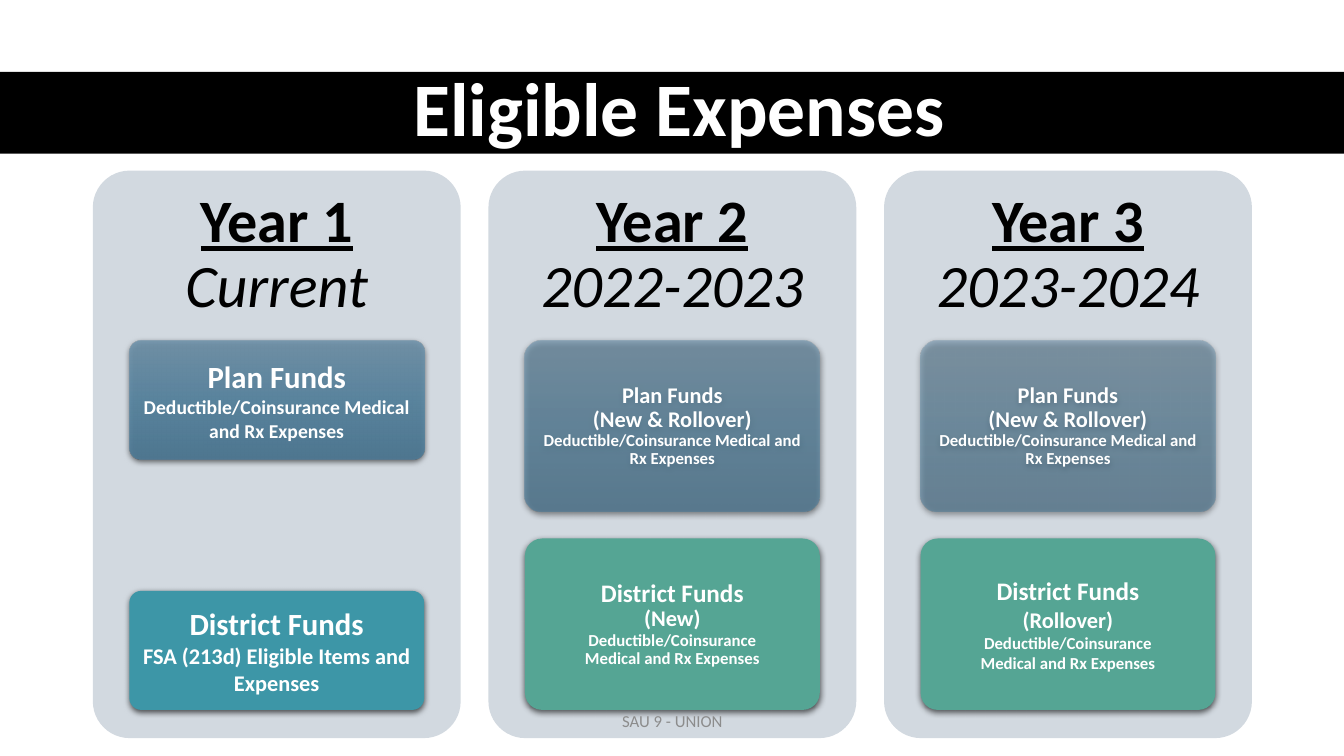
from dataclasses import dataclass
from typing import Any, NamedTuple, Optional

from lxml import etree
from pptx import Presentation
from pptx.dml.color import RGBColor
from pptx.enum.shapes import MSO_SHAPE
from pptx.enum.text import MSO_ANCHOR, MSO_AUTO_SIZE, PP_ALIGN
from pptx.oxml.ns import qn
from pptx.util import Cm, Pt

RECTANGLE = MSO_SHAPE.RECTANGLE
ROUNDED = MSO_SHAPE.ROUNDED_RECTANGLE
MIDDLE = MSO_ANCHOR.MIDDLE
NO_FIT = MSO_AUTO_SIZE.NONE
CENTER = PP_ALIGN.CENTER


@dataclass(frozen=True)
class Theme:
    font: str = "Calibri"
    black: str = "000000"
    white: str = "FFFFFF"
    panel: str = "D2D9E0"
    footer: str = "8C8C8C"
    teal: str = "3D96A7"
    green: str = "55A594"
    gradient: tuple[str, ...] = ("7294AB", "5A88A4", "4D7995")
    title_size: float = 54
    year_size: float = 43
    heading_size: float = 22
    subheading_size: float = 18
    label_size: float = 16
    detail_size: float = 14
    small_size: float = 12


class Box(NamedTuple):
    left: float
    top: float
    width: float
    height: float


class Line(NamedTuple):
    text: str
    size: float
    color: str
    bold: bool = False
    italic: bool = False
    underline: bool = False


@dataclass(frozen=True)
class Card:
    top: float
    height: float
    lines: tuple[Line, ...]
    spacing: float
    color: Optional[str] = None
    opacity: int = 100


@dataclass(frozen=True)
class Column:
    year: str
    period: str
    cards: tuple[Card, ...]


THEME = Theme()
SLIDE_WIDTH, SLIDE_HEIGHT = 33.87, 19.05
BAND = Box(0, 1.81, SLIDE_WIDTH, 2.06)
TITLE = Box(1.55, 1.78, 31.14, 2.06)
FOOTER = Box(11.23, 17.65, 11.43, 1.02)
PANEL = Box(2.34, 4.3, 9.27, 14.3)
COLUMN_PITCH = 9.97
YEAR_HEIGHT = 4.29
CARD_INSET = 0.92
CARD_WIDTH = 7.43
CARD_TOP = 8.58
CARD_BOTTOM = 17.89
CARD_HEIGHT = 4.32
SHORT_HEIGHT = 3
CORNER = 0.1
DEDUCTIBLE = "Deductible/Coinsurance Medical and Rx Expenses"
DEDUCTIBLE_SPLIT = "Deductible/Coinsurance\nMedical and Rx Expenses"


def white_lines(*entries: tuple[str, float]) -> tuple[Line, ...]:
    return tuple(Line(text, size, THEME.white, bold=True) for text, size in entries)


def plan_card(opacity: int) -> Card:
    lines = white_lines(("Plan Funds\n(New & Rollover)", THEME.label_size),
                        (DEDUCTIBLE, THEME.small_size))
    return Card(CARD_TOP, CARD_HEIGHT, lines, 0.9, opacity=opacity)


def district_card(kind: str, spacing: float) -> Card:
    lines = white_lines(("District Funds", THEME.subheading_size),
                        (kind, THEME.label_size),
                        (DEDUCTIBLE_SPLIT, THEME.small_size))
    return Card(CARD_BOTTOM - CARD_HEIGHT, CARD_HEIGHT, lines, spacing, THEME.green)


COLUMNS = (
    Column("Year 1", "Current", (
        Card(CARD_TOP, SHORT_HEIGHT,
             white_lines(("Plan Funds", THEME.heading_size), (DEDUCTIBLE, THEME.detail_size)),
             1.0, opacity=90),
        Card(CARD_BOTTOM - SHORT_HEIGHT, SHORT_HEIGHT,
             white_lines(("District Funds", THEME.heading_size),
                         ("FSA (213d) Eligible Items and Expenses", THEME.label_size)),
             1.0, THEME.teal),
    )),
    Column("Year 2", "2022-2023", (plan_card(70), district_card("(New)", 0.9))),
    Column("Year 3", "2023-2024", (plan_card(57), district_card("(Rollover)", 1.0))),
)


def set_attributes(target: Any, values: dict[str, Any]) -> None:
    for name, value in values.items():
        setattr(target, name, value)


def lengths(box: Box) -> tuple[Cm, ...]:
    return tuple(Cm(value) for value in box)


def write_lines(shape: Any, lines: tuple[Line, ...], spacing: float = 1.0,
                margin: float = 0.25) -> None:
    frame = shape.text_frame
    inset = Cm(margin)
    set_attributes(frame, {
        "word_wrap": True, "auto_size": NO_FIT, "vertical_anchor": MIDDLE,
        "margin_left": inset, "margin_right": inset,
        "margin_top": Cm(margin / 2), "margin_bottom": Cm(margin / 2),
    })
    for index, line in enumerate(lines):
        paragraph = frame.add_paragraph() if index else frame.paragraphs[0]
        set_attributes(paragraph, {"alignment": CENTER, "line_spacing": spacing,
                                   "space_before": Pt(0), "space_after": Pt(0)})
        for part_index, part in enumerate(line.text.split("\n")):
            if part_index:
                paragraph.add_line_break()
            run = paragraph.add_run()
            run.text = part
            set_attributes(run.font, {
                "name": THEME.font, "size": Pt(line.size), "bold": line.bold,
                "italic": line.italic, "underline": line.underline,
            })
            run.font.color.rgb = RGBColor.from_string(line.color)


def add_block(slide: Any, kind: Any, box: Box, color: str) -> Any:
    shape = slide.shapes.add_shape(kind, *lengths(box))
    shape.shadow.inherit = False
    shape.line.fill.background()
    shape.fill.solid()
    shape.fill.fore_color.rgb = RGBColor.from_string(color)
    if kind == ROUNDED:
        shape.adjustments[0] = CORNER
    return shape


def add_color(parent: Any, color: str, opacity: int) -> None:
    node = etree.SubElement(parent, qn("a:srgbClr"), val=color)
    etree.SubElement(node, qn("a:alpha"), val=str(opacity * 1000))


def apply_gradient(shape: Any, opacity: int) -> None:
    solid = shape.element.spPr.find(qn("a:solidFill"))
    gradient = etree.Element(qn("a:gradFill"), rotWithShape="1")
    stops = etree.SubElement(gradient, qn("a:gsLst"))
    for index, color in enumerate(THEME.gradient):
        add_color(etree.SubElement(stops, qn("a:gs"), pos=str(index * 50000)), color, opacity)
    etree.SubElement(gradient, qn("a:lin"), ang="5400000", scaled="0")
    shape.element.spPr.replace(solid, gradient)


def apply_shadow(shape: Any) -> None:
    effects = shape.element.spPr.find(qn("a:effectLst"))
    shadow = etree.SubElement(effects, qn("a:outerShdw"), blurRad=str(Pt(4.5)),
                              dist=str(Pt(1.5)), dir="5400000", algn="ctr", rotWithShape="0")
    add_color(shadow, THEME.black, 63)


def add_card(slide: Any, left: float, card: Card) -> None:
    box = Box(left, card.top, CARD_WIDTH, card.height)
    shape = add_block(slide, ROUNDED, box, card.color or THEME.gradient[0])
    if card.color is None:
        apply_gradient(shape, card.opacity)
    apply_shadow(shape)
    write_lines(shape, card.lines, card.spacing)


def add_column(slide: Any, left: float, column: Column) -> None:
    add_block(slide, ROUNDED, PANEL._replace(left=left), THEME.panel)
    heading = slide.shapes.add_textbox(*lengths(Box(left, PANEL.top, PANEL.width, YEAR_HEIGHT)))
    write_lines(heading, (
        Line(column.year, THEME.year_size, THEME.black, bold=True, underline=True),
        Line(column.period, THEME.year_size, THEME.black, italic=True),
    ), 0.9, 0.45)
    for card in column.cards:
        add_card(slide, left + CARD_INSET, card)


def main() -> None:
    presentation = Presentation()
    presentation.slide_width, presentation.slide_height = Cm(SLIDE_WIDTH), Cm(SLIDE_HEIGHT)
    slide = presentation.slides.add_slide(presentation.slide_layouts[5])
    title = slide.shapes.title
    set_attributes(title, dict(zip(Box._fields, lengths(TITLE))))
    write_lines(title, (Line("Eligible Expenses", THEME.title_size, THEME.white, bold=True),), 0.9)
    band = add_block(slide, RECTANGLE, BAND, THEME.black)
    title.element.addprevious(band.element)
    for index, column in enumerate(COLUMNS):
        add_column(slide, PANEL.left + index * COLUMN_PITCH, column)
    footer = slide.shapes.add_textbox(*lengths(FOOTER))
    write_lines(footer, (Line("SAU 9 - UNION", THEME.small_size, THEME.footer),))
    presentation.save("out.pptx")


if __name__ == "__main__":
    main()
